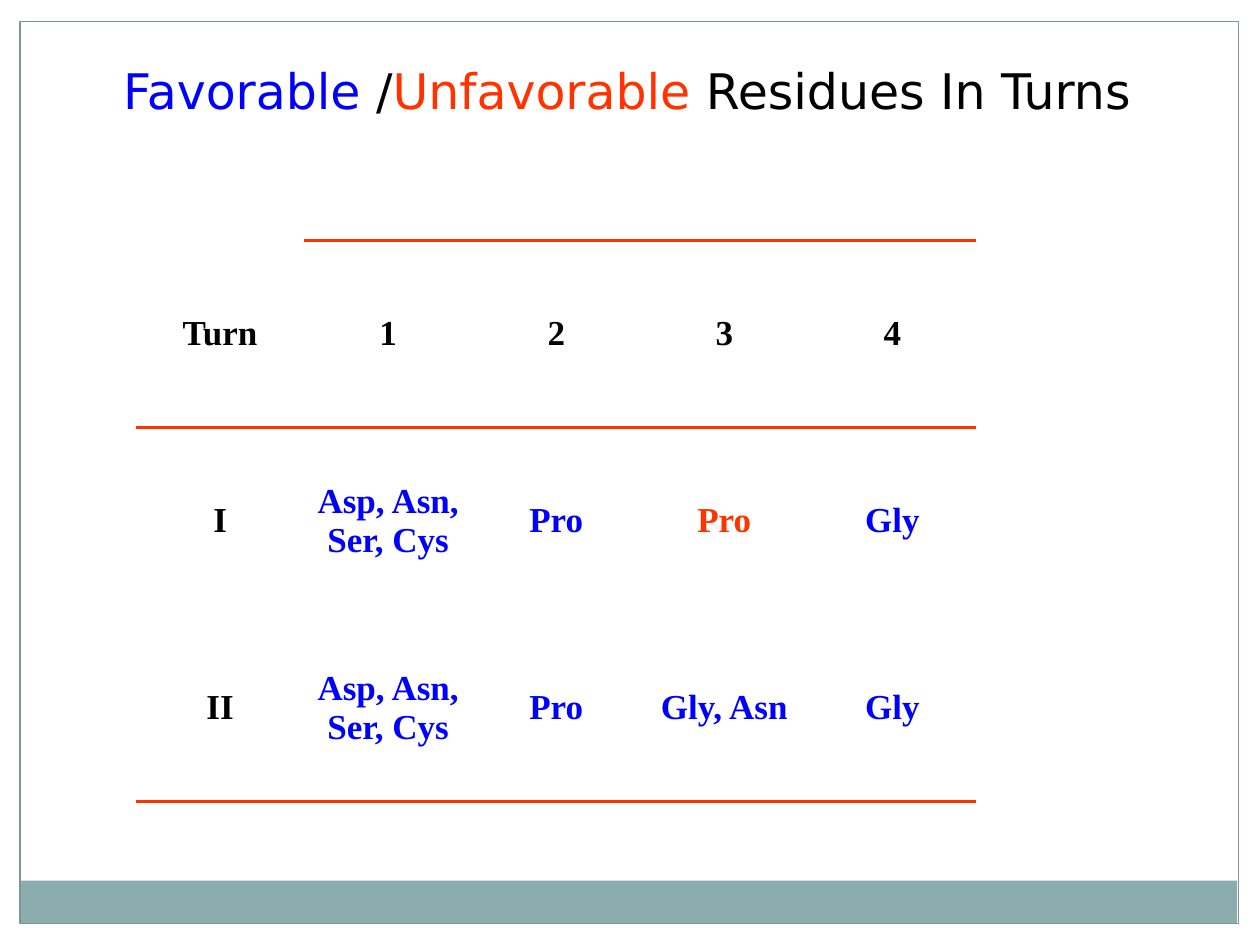
from lxml.etree import SubElement
from pptx import Presentation
from pptx.dml.color import RGBColor
from pptx.enum.shapes import MSO_SHAPE
from pptx.enum.text import MSO_ANCHOR, MSO_AUTO_SIZE, PP_ALIGN
from pptx.oxml.ns import qn
from pptx.util import Inches, Pt

BLACK = RGBColor(0x00, 0x00, 0x00)
WHITE = RGBColor(0xFF, 0xFF, 0xFF)
BLUE = RGBColor(0x00, 0x00, 0xFF)
RED = RGBColor(0xFF, 0x33, 0x00)
SAGE = RGBColor(0x8C, 0xAD, 0xAE)
FRAME = RGBColor(0x7B, 0x98, 0x99)

EDGES = [(0, 0, 10, 0.17), (9.83, 0, 0.17, 7.5), (0, 0, 0.17, 7.5)]
HEADING = [("Favorable", BLUE), (" /", BLACK), ("Unfavorable", RED),
           (" Residues In Turns", BLACK)]
RESIDUES = [
    ["Turn", "1", "2", "3", "4"],
    ["I", "Asp, Asn, Ser, Cys", "Pro", "Pro", "Gly"],
    ["II", "Asp, Asn, Ser, Cys", "Pro", "Gly, Asn", "Gly"],
]
UNFAVORABLE = {(1, 3)}


def residue_color(row, column):
    if row == 0 or column == 0:
        return BLACK
    return RED if (row, column) in UNFAVORABLE else BLUE


def ruled_sides(row, column):
    sides = set()
    if row == 1 or (row == 0 and column > 0):
        sides.add("T")
    if row in (0, len(RESIDUES) - 1):
        sides.add("B")
    return sides


class TurnSlide:
    title_font = {"name": "DejaVu Sans", "size": Pt(28), "bold": False}
    cell_font = {"name": "Times New Roman", "size": Pt(20), "bold": True}
    margins = {f"margin_{side}": Inches(0.05)
               for side in ("left", "top", "right", "bottom")}
    rule_width = Pt(2.25)

    def __init__(self, presentation):
        self.slide = presentation.slides.add_slide(presentation.slide_layouts[5])

    def apply(self, target, values):
        for name, value in values.items():
            setattr(target, name, value)

    def run(self, paragraph, text, font, color):
        run = paragraph.add_run()
        run.text = text
        self.apply(run.font, font)
        run.font.color.rgb = color

    def title(self, pieces, box):
        heading = self.slide.shapes.title
        self.apply(heading, dict(zip(("left", "top", "width", "height"),
                                     map(Inches, box))))
        self.apply(heading.text_frame, {
            **self.margins, "word_wrap": True,
            "auto_size": MSO_AUTO_SIZE.NONE,
            "vertical_anchor": MSO_ANCHOR.MIDDLE})
        paragraph = heading.text_frame.paragraphs[0]
        paragraph.alignment = PP_ALIGN.CENTER
        for text, color in pieces:
            self.run(paragraph, text, self.title_font, color)

    def rectangle(self, box, fill=None, line=None):
        panel = self.slide.shapes.add_shape(MSO_SHAPE.RECTANGLE,
                                            *map(Inches, box))
        panel.shadow.inherit = False
        if fill is None:
            panel.fill.background()
        else:
            panel.fill.solid()
            panel.fill.fore_color.rgb = fill
        if line is None:
            panel.line.fill.background()
        else:
            panel.line.color.rgb = line
            panel.line.width = Pt(0.75)

    def borders(self, cell, ruled):
        properties = cell._tc.get_or_add_tcPr()
        for side in "LRTB":
            border = SubElement(properties, qn(f"a:ln{side}"))
            if side in ruled:
                border.set("w", str(self.rule_width))
                fill = SubElement(border, qn("a:solidFill"))
                SubElement(fill, qn("a:srgbClr")).set("val", str(RED))
            else:
                SubElement(border, qn("a:noFill"))

    def table(self, rows, box):
        grid = self.slide.shapes.add_table(len(rows), len(rows[0]),
                                           *map(Inches, box)).table
        self.apply(grid, {"first_row": False, "horz_banding": False})
        for r, row in enumerate(rows):
            for c, text in enumerate(row):
                cell = grid.cell(r, c)
                self.borders(cell, ruled_sides(r, c))
                cell.fill.background()
                self.apply(cell, {**self.margins,
                                  "vertical_anchor": MSO_ANCHOR.MIDDLE})
                paragraph = cell.text_frame.paragraphs[0]
                self.apply(paragraph, {"alignment": PP_ALIGN.CENTER,
                                       "space_before": Pt(4)})
                self.run(paragraph, text, self.cell_font, residue_color(r, c))


def main():
    presentation = Presentation()
    presentation.slide_width = Inches(10)
    presentation.slide_height = Inches(7.5)
    turns = TurnSlide(presentation)
    for edge in EDGES:
        turns.rectangle(edge, fill=WHITE)
    turns.rectangle((0.16, 6.99, 9.66, 0.34), fill=SAGE)
    turns.rectangle((0.16, 0.17, 9.67, 7.16), line=FRAME)
    turns.title(HEADING, (0.47, 0.43, 9.01, 0.57))
    turns.table(RESIDUES, (1.08, 1.91, 6.67, 4.45))
    presentation.save("out.pptx")


if __name__ == "__main__":
    main()
